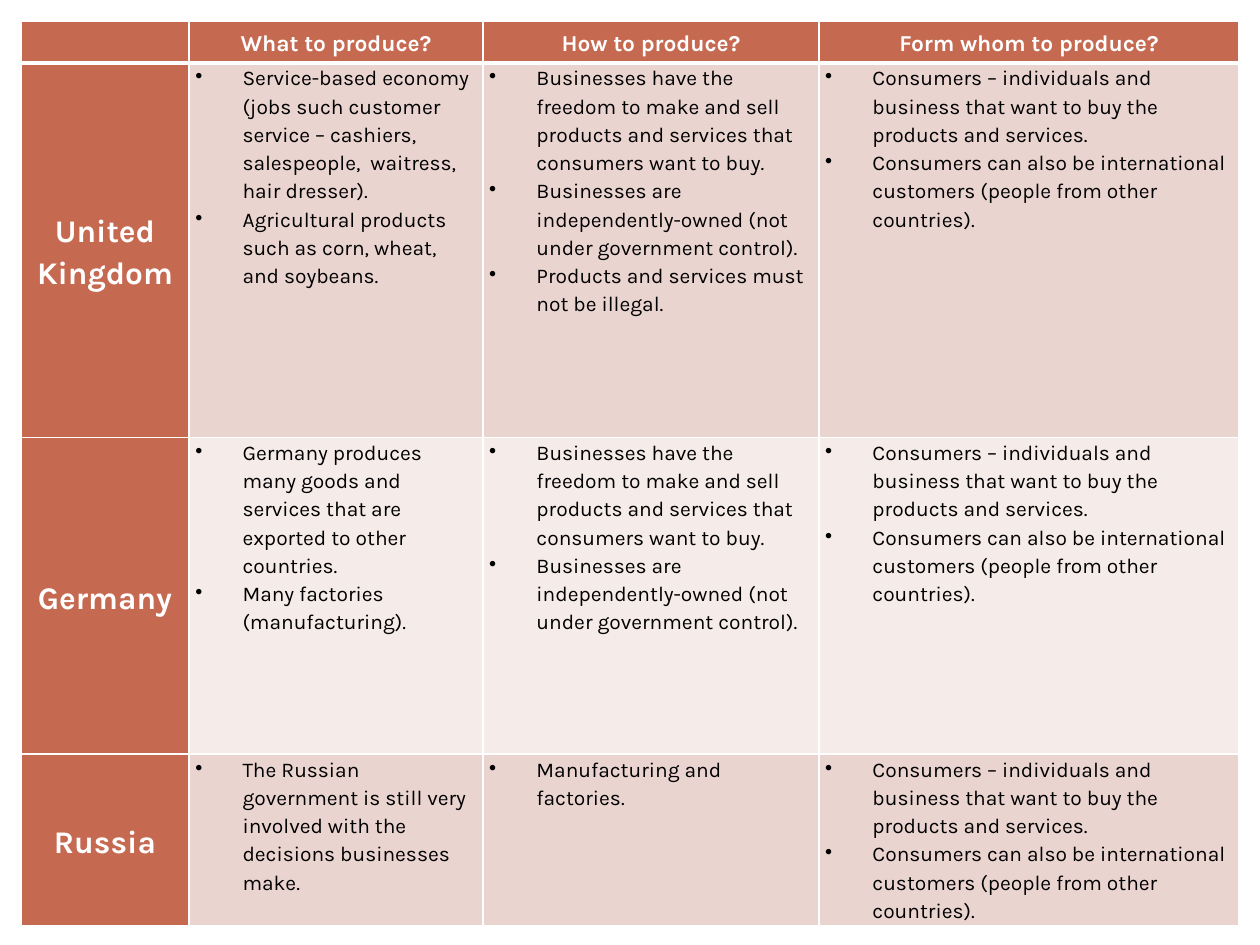
"""Build a slide with a table comparing three national economies."""
from dataclasses import dataclass

from lxml.etree import SubElement
from pptx import Presentation
from pptx.dml.color import RGBColor
from pptx.enum.text import MSO_VERTICAL_ANCHOR as Anchor, PP_PARAGRAPH_ALIGNMENT as Align
from pptx.oxml.ns import qn
from pptx.table import _Cell as Cell
from pptx.util import Length, Pt

WHITE = RGBColor(0xFF, 0xFF, 0xFF)
BLACK = RGBColor(0x00, 0x00, 0x00)
RUST = RGBColor(0xC6, 0x69, 0x51)
ROSE = RGBColor(0xEA, 0xD4, 0xD0)
PALE_ROSE = RGBColor(0xF5, 0xEB, 0xE9)

FONT_NAME = "Karla"
MARGIN = Pt(12)
COLUMN_WIDTHS = [Pt(96), Pt(168), Pt(192), Pt(240)]
HEADER_HEIGHT = Pt(24)
BULLET_INDENT = Pt(27)
THIN, THICK = Pt(1), Pt(3)
CELL_FORMAT = {"margin_left": Pt(3.6), "margin_right": Pt(3.6), "margin_top": 0, "margin_bottom": 0}


@dataclass(frozen=True)
class CellStyle:
    size: Length
    color: RGBColor
    bold: bool
    anchor: Anchor
    alignment: Align
    bulleted: bool = False


@dataclass(frozen=True)
class Country:
    name: str
    height: Length
    fill: RGBColor
    answers: tuple[tuple[str, ...], ...]


HEADING = CellStyle(Pt(13), WHITE, True, Anchor.MIDDLE, Align.CENTER)
COUNTRY_NAME = CellStyle(Pt(18), WHITE, True, Anchor.MIDDLE, Align.CENTER)
ANSWER = CellStyle(Pt(12), BLACK, False, Anchor.TOP, Align.LEFT, True)

QUESTIONS = ("", "What to produce?", "How to produce?", "Form whom to produce?")
FREE_BUSINESSES = (
    "Businesses have the freedom to make and sell products and services that consumers want to buy.",
    "Businesses are independently-owned (not under government control).",
)
CONSUMERS = (
    "Consumers – individuals and business that want to buy the products and services.",
    "Consumers can also be international customers (people from other countries).",
)
COUNTRIES = (
    Country("United Kingdom", Pt(214), ROSE, (
        (
            "Service-based economy (jobs such customer service – cashiers, "
            "salespeople,  waitress, hair dresser).",
            "Agricultural products such as corn, wheat, and soybeans.",
        ),
        (*FREE_BUSINESSES, "Products and services must not be illegal."),
        CONSUMERS,
    )),
    Country("Germany", Pt(181), PALE_ROSE, (
        (
            "Germany produces many goods and services that are exported to other countries.",
            "Many factories (manufacturing).",
        ),
        FREE_BUSINESSES,
        CONSUMERS,
    )),
    Country("Russia", Pt(98), ROSE, (
        ("The Russian government is still very involved with the decisions businesses make.",),
        ("Manufacturing and factories.",),
        CONSUMERS,
    )),
)


def set_format(target: object, values: dict[str, object]) -> None:
    for name, value in values.items():
        setattr(target, name, value)


def draw_borders(cell: Cell, top: Length, bottom: Length) -> None:
    properties = cell._tc.get_or_add_tcPr()
    for side, width in {"L": THIN, "R": THIN, "T": top, "B": bottom}.items():
        line = SubElement(properties, qn(f"a:ln{side}"), w=str(int(width)))
        fill = SubElement(line, qn("a:solidFill"))
        SubElement(fill, qn("a:srgbClr"), val=str(WHITE))


def write_cell(cell: Cell, texts: tuple[str, ...], style: CellStyle, fill: RGBColor,
               top: Length = THIN, bottom: Length = THIN) -> None:
    set_format(cell, CELL_FORMAT | {"vertical_anchor": style.anchor})
    draw_borders(cell, top, bottom)
    cell.fill.solid()
    cell.fill.fore_color.rgb = fill
    cell.text = "\n".join(texts)
    for paragraph in cell.text_frame.paragraphs:
        set_format(paragraph, {"alignment": style.alignment, "line_spacing": 1.15})
        if style.bulleted:
            properties = paragraph._p.get_or_add_pPr()
            properties.set("marL", str(int(BULLET_INDENT)))
            properties.set("indent", str(-int(BULLET_INDENT)))
            SubElement(properties, qn("a:buChar"), char="•")
        for run in paragraph.runs:
            set_format(run.font, {"name": FONT_NAME, "size": style.size, "bold": style.bold})
            run.font.color.rgb = style.color


def main() -> None:
    presentation = Presentation()
    set_format(presentation, {"slide_width": Pt(720), "slide_height": Pt(540)})
    slide = presentation.slides.add_slide(presentation.slide_layouts[6])
    heights = [HEADER_HEIGHT, *(country.height for country in COUNTRIES)]
    table = slide.shapes.add_table(
        len(heights), len(COLUMN_WIDTHS), MARGIN, MARGIN, sum(COLUMN_WIDTHS), sum(heights)
    ).table
    table.horz_banding = False
    for column, width in zip(table.columns, COLUMN_WIDTHS):
        column.width = width
    for row, height in zip(table.rows, heights):
        row.height = height

    for column_index, question in enumerate(QUESTIONS):
        write_cell(table.cell(0, column_index), (question,), HEADING, RUST, bottom=THICK)
    for row_index, country in enumerate(COUNTRIES, start=1):
        top = THICK if row_index == 1 else THIN
        write_cell(table.cell(row_index, 0), (country.name,), COUNTRY_NAME, RUST, top)
        for column_index, answer in enumerate(country.answers, start=1):
            write_cell(table.cell(row_index, column_index), answer, ANSWER, country.fill, top)
    presentation.save("out.pptx")


if __name__ == "__main__":
    main()
